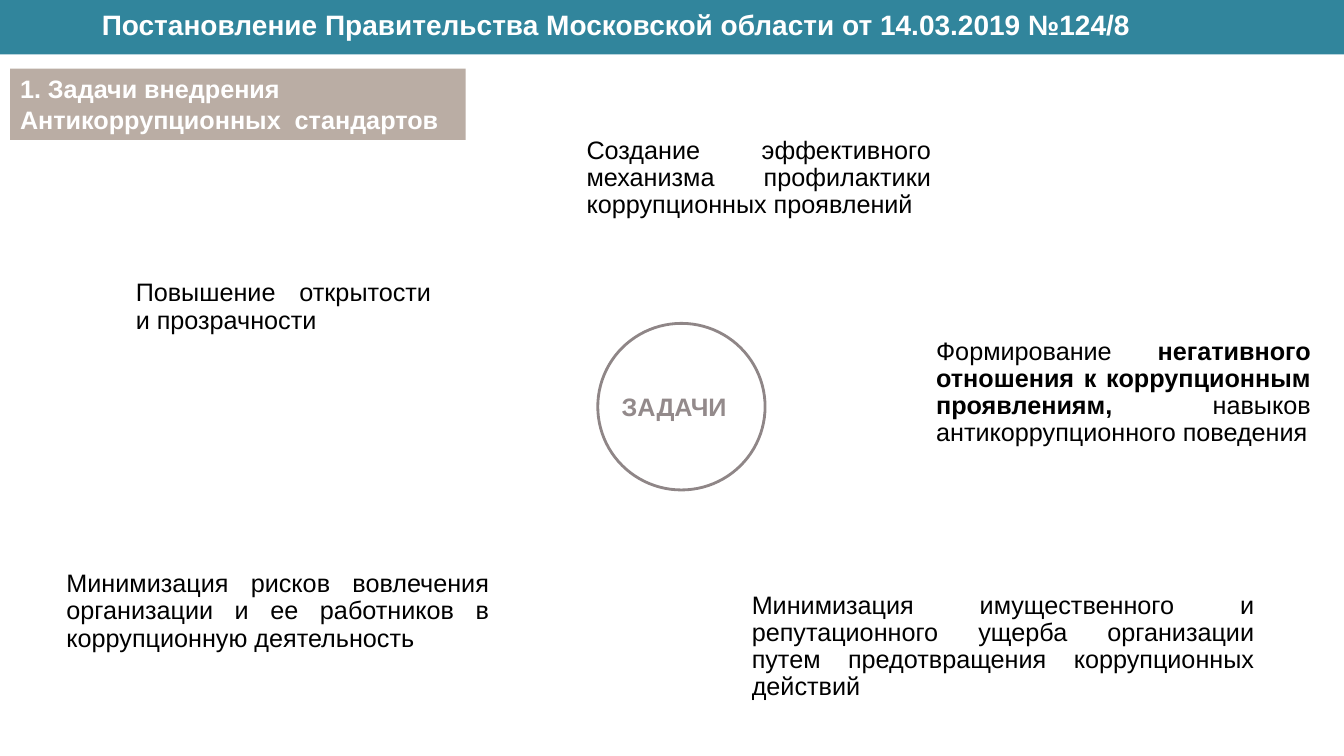
from math import cos, pi, sin

from lxml.etree import SubElement
from pptx import Presentation
from pptx.dml.color import RGBColor
from pptx.enum.shapes import MSO_SHAPE
from pptx.enum.text import MSO_ANCHOR, MSO_AUTO_SIZE, PP_ALIGN
from pptx.oxml.ns import qn
from pptx.util import Pt

WHITE, BLACK = "FFFFFF", "000000"
TEAL, SAND, RING, LABEL = "31859C", "BAADA4", "8F8687", "938A8B"

CARDS = [
    ((88.6, 183.6, 227.5, 71.3), 8,
     [("Повышение открытости и прозрачности", False)]),
    ((411.1, 80.6, 262.1, 92.9), 8,
     [("Создание эффективного механизма профилактики коррупционных проявлений", False)]),
    ((38.9, 393.8, 319.5, 85.7), 8.5,
     [("Минимизация рисков вовлечения организации и ее работников "
       "в коррупционную деятельность", False)]),
    ((659.5, 231.1, 285.3, 99.4), 8.7,
     [("Формирование ", False),
      ("негативного отношения к коррупционным проявлениям,", True),
      (" навыков антикоррупционного поведения", False)]),
    ((528.5, 411.1, 376.2, 101.5), 9,
     [("Минимизация имущественного и репутационного ущерба организации "
       "путем предотвращения коррупционных действий", False)]),
]


def color_of(value):
    """Turn a hex string into a colour."""
    return RGBColor.from_string(value)


def write(para, text, size=18, color=BLACK, bold=False, font="Arial"):
    """Add one formatted span of text to a paragraph."""
    span = para.add_run()
    span.text = text
    span.font.name = font
    span.font.size = Pt(size)
    span.font.bold = bold
    span.font.color.rgb = color_of(color)


class TaskSlide:
    """Style and current page of the tasks slide."""

    def __init__(self, deck):
        """Open a page that has only a title."""
        self.page = deck.slides.add_slide(deck.slide_layouts[5])
        self.shapes = self.page.shapes

    def paint(self, shape, fill, line=None, weight=1):
        """Set fill and outline and drop the shadow."""
        shape.shadow.inherit = False
        shape.fill.solid()
        shape.fill.fore_color.rgb = color_of(fill)
        if line:
            shape.line.color.rgb = color_of(line)
            shape.line.width = Pt(weight)
        else:
            shape.line.fill.background()

    def frame(self, shape, anchor=MSO_ANCHOR.TOP, align=PP_ALIGN.LEFT, spacing=1.0,
              side=7.2, top=3.6, fit=MSO_AUTO_SIZE.NONE):
        """Set up the text area and return its first paragraph."""
        box = shape.text_frame
        box.word_wrap = True
        box.auto_size = fit
        box.vertical_anchor = anchor
        box.margin_left = box.margin_right = Pt(side)
        box.margin_top = box.margin_bottom = Pt(top)
        para = box.paragraphs[0]
        para.alignment = align
        para.line_spacing = spacing
        return para

    def shape(self, kind, place, fill, line=None, weight=1):
        """Add a preset shape."""
        shape = self.shapes.add_shape(kind, *map(Pt, place))
        self.paint(shape, fill, line, weight)
        return shape

    def title(self, text, place, band):
        """Move the title placeholder onto its band."""
        title = self.shapes.title
        band.element.addnext(title.element)
        title.left, title.top, title.width, title.height = map(Pt, place)
        para = self.frame(title, align=PP_ALIGN.JUSTIFY, spacing=0.75,
                          side=6.5, top=2.9, fit=MSO_AUTO_SIZE.SHAPE_TO_FIT_TEXT)
        write(para, text, size=20, color=WHITE, bold=True)

    def card(self, place, inset, spans):
        """Add a translucent card with elliptical corners and justified text."""
        left, top, width, height = place
        across, down, steps = width * 0.01, height / 6, 4
        points = []
        for corner in range(4):
            x = left + (across if corner in (0, 3) else width - across)
            y = top + (down if corner < 2 else height - down)
            for step in range(steps + 1):
                angle = pi + (corner + step / steps) * pi / 2
                points.append((x + across * cos(angle), y + down * sin(angle)))
        outline = self.shapes.build_freeform(*points[0], scale=Pt(1))
        outline.add_line_segments(points[1:], close=True)
        shape = outline.convert_to_shape()
        self.paint(shape, WHITE, WHITE, 0.25)
        solid = shape.element.spPr.find(qn("a:solidFill"))
        SubElement(solid[0], qn("a:alpha"), val="90000")
        para = self.frame(shape, MSO_ANCHOR.MIDDLE, PP_ALIGN.JUSTIFY, 0.9, inset, inset)
        for text, bold in spans:
            write(para, text, bold=bold)

    def label(self, text, place, color):
        """Add a bold text box."""
        box = self.shapes.add_textbox(*map(Pt, place))
        para = self.frame(box, fit=MSO_AUTO_SIZE.SHAPE_TO_FIT_TEXT)
        write(para, text, color=color, bold=True)

    def badge(self, text, place, fill):
        """Add a filled section heading."""
        shape = self.shape(MSO_SHAPE.RECTANGLE, place, fill)
        para = self.frame(shape, fit=MSO_AUTO_SIZE.SHAPE_TO_FIT_TEXT)
        write(para, text, color=WHITE, bold=True)


def main():
    """Build and save the deck."""
    deck = Presentation()
    deck.slide_width, deck.slide_height = Pt(960), Pt(540)
    slide = TaskSlide(deck)
    band = slide.shape(MSO_SHAPE.RECTANGLE, (0, 0, 960, 38.9), TEAL)
    slide.title("Постановление Правительства Московской области от 14.03.2019 №124/8",
                (66.2, 7.9, 878.4, 24.5), band)
    for place, inset, spans in CARDS:
        slide.card(place, inset, spans)
    slide.shape(MSO_SHAPE.OVAL, (427, 231, 119.5, 119), WHITE, RING, 2)
    slide.label("ЗАДАЧИ", (437, 275.8, 99.4, 28.8), LABEL)
    slide.badge("1. Задачи внедрения Антикоррупционных  стандартов",
                (7.2, 49, 325.4, 51), SAND)
    deck.save("out.pptx")


if __name__ == "__main__":
    main()
